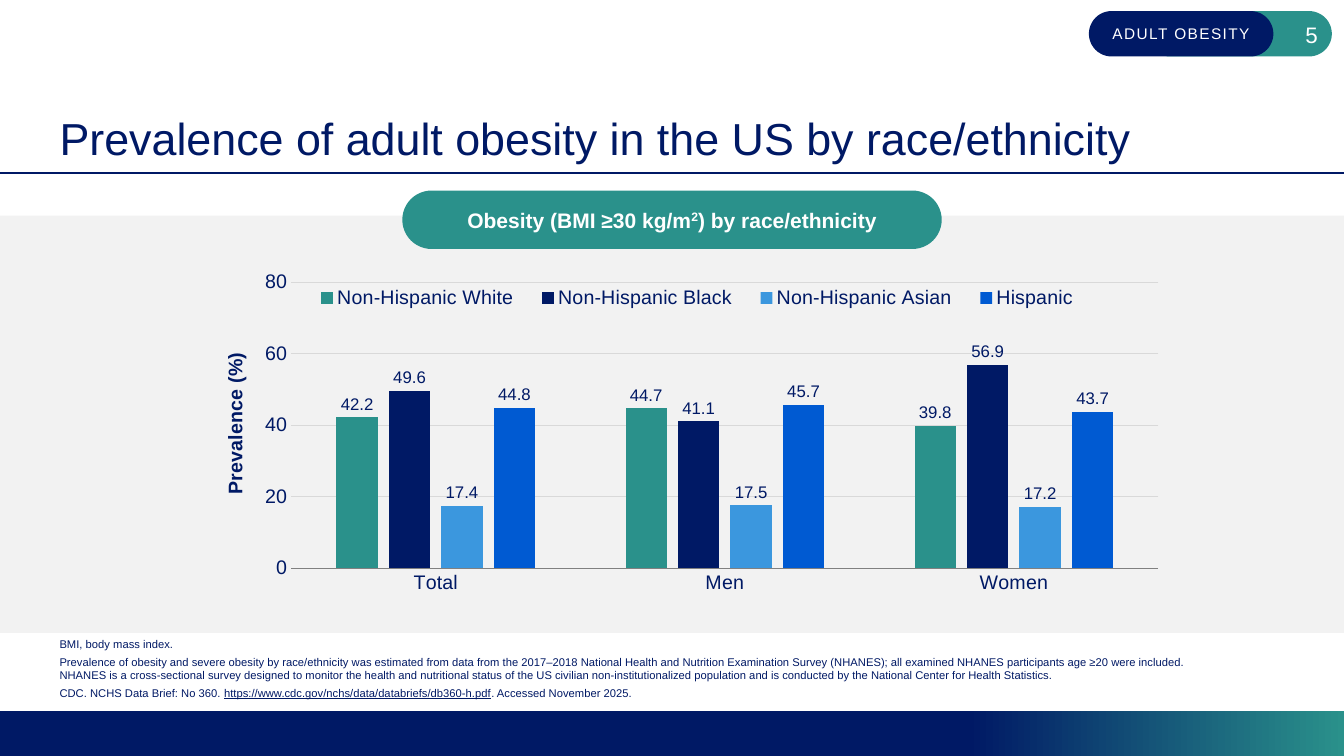
import copy

import pptx
import pptx.chart.data
import pptx.dml.color
import pptx.enum.chart
import pptx.enum.shapes
import pptx.enum.text
import pptx.oxml
import pptx.oxml.ns
import pptx.util

Inches, Pt = pptx.util.Inches, pptx.util.Pt
RGBColor = pptx.dml.color.RGBColor
SHAPE = pptx.enum.shapes.MSO_SHAPE
ALIGN = pptx.enum.text.PP_ALIGN
ANCHOR = pptx.enum.text.MSO_ANCHOR
XL = pptx.enum.chart
qn = pptx.oxml.ns.qn

NAVY = RGBColor(0x00, 0x19, 0x65)
TEAL = RGBColor(0x2A, 0x91, 0x8B)
SKY = RGBColor(0x3B, 0x97, 0xDE)
BLUE = RGBColor(0x00, 0x5A, 0xD2)
WHITE = RGBColor(0xFF, 0xFF, 0xFF)
PANEL = RGBColor(0xF2, 0xF2, 0xF2)
GRID = RGBColor(0xD9, 0xD9, 0xD9)
AXIS = RGBColor(0x80, 0x80, 0x80)

TITLE = "Prevalence of adult obesity in the US by race/ethnicity"
SECTION = "ADULT OBESITY"
PAGE = "5"
HEADING = [("Obesity (BMI ≥30 kg/m", False), ("2", True), (") by race/ethnicity", False)]
NOTES = [
    [("BMI, body mass index.", False)],
    [("Prevalence of obesity and severe obesity by race/ethnicity was estimated from data from the "
      "2017–2018 National Health and Nutrition Examination Survey (NHANES); all examined NHANES "
      "participants age ≥20 were included.\vNHANES is a cross-sectional survey designed to monitor "
      "the health and nutritional status of the US civilian non-institutionalized population and is "
      "conducted by the National Center for Health Statistics.", False)],
    [("CDC. NCHS Data Brief: No 360. ", False),
     ("https://www.cdc.gov/nchs/data/databriefs/db360-h.pdf", True),
     (". Accessed November 2025.", False)],
]
GROUPS = ["Total", "Men", "Women"]
SERIES = [
    ("Non-Hispanic White", (42.2, 44.7, 39.8), TEAL),
    ("Non-Hispanic Black", (49.6, 41.1, 56.9), NAVY),
    ("Non-Hispanic Asian", (17.4, 17.5, 17.2), SKY),
    ("Hispanic", (44.8, 45.7, 43.7), BLUE),
]


def style(font, size, color=NAVY, bold=False):
    """Set the face, size, colour and weight of a font."""
    font.name, font.size, font.bold = "Arial", Pt(size), bold
    font.color.rgb = color


def add_block(s, kind, box, color):
    """Add a filled shape without outline or shadow."""
    sp = s.shapes.add_shape(kind, *map(Inches, box))
    sp.shadow.inherit = False
    sp.fill.solid()
    sp.fill.fore_color.rgb = color
    sp.line.fill.background()
    if kind == SHAPE.ROUNDED_RECTANGLE:
        sp.adjustments[0] = 0.5
    return sp


def prepare(tf, anchor, margin=0):
    """Set wrapping, anchor and equal margins of a text frame."""
    tf.word_wrap = True
    tf.auto_size = pptx.enum.text.MSO_AUTO_SIZE.NONE
    tf.vertical_anchor = anchor
    tf.margin_left = tf.margin_right = tf.margin_top = tf.margin_bottom = Inches(margin)
    return tf


def write(tf, text, size, color, align):
    """Write one styled paragraph."""
    p = tf.paragraphs[0]
    p.text, p.alignment = text, align
    style(p.runs[0].font, size, color)
    return p.runs[0]


def set_layout(parent, index, mode, **fractions):
    """Place a chart part by fractions of the chart area."""
    for old in parent.findall(qn("c:layout")):
        parent.remove(old)
    inner = '<c:layoutTarget val="inner"/>' if mode == "inner" else ""
    modes = '<c:xMode val="edge"/><c:yMode val="edge"/>'
    values = "".join(f'<c:{k} val="{v}"/>' for k, v in fractions.items())
    parent.insert(index, pptx.oxml.parse_xml(
        f'<c:layout {pptx.oxml.ns.nsdecls("c")}><c:manualLayout>{inner}{modes}{values}'
        '</c:manualLayout></c:layout>'))


def add_frame(s):
    """Add the footer band, title rule, badge and grey panel."""
    band = add_block(s, SHAPE.RECTANGLE, (0, 7.05, 13.33, 0.45), NAVY)
    band.fill.gradient()
    band.fill.gradient_angle = 0
    first = band._element.spPr.find(".//" + qn("a:gs"))
    first.addnext(copy.deepcopy(first))
    for stop, (position, color) in zip(band.fill.gradient_stops,
                                       [(0, NAVY), (0.72, NAVY), (1, TEAL)]):
        stop.position, stop.color.rgb = position, color

    rule = s.shapes.add_connector(pptx.enum.shapes.MSO_CONNECTOR.STRAIGHT,
                                  0, Inches(1.72), Inches(13.33), Inches(1.72))
    rule.line.color.rgb, rule.line.width = NAVY, Pt(1.5)
    rule._element.spPr.append(pptx.oxml.parse_xml(
        f'<a:effectLst {pptx.oxml.ns.nsdecls("a")}/>'))

    add_block(s, SHAPE.ROUNDED_RECTANGLE, (11.38, 0.11, 1.83, 0.45), TEAL)
    badge = add_block(s, SHAPE.ROUNDED_RECTANGLE, (10.8, 0.11, 1.83, 0.45), NAVY)
    r = write(prepare(badge.text_frame, ANCHOR.MIDDLE, 0.04), SECTION, 11, WHITE, ALIGN.CENTER)
    r.font._element.set("spc", "100")
    page = s.shapes.add_textbox(*map(Inches, (12.54, 0.14, 0.63, 0.4)))
    write(prepare(page.text_frame, ANCHOR.MIDDLE, 0.1), PAGE, 16, WHITE, ALIGN.RIGHT)
    add_block(s, SHAPE.RECTANGLE, (0, 2.14, 13.33, 4.14), PANEL)


def add_texts(s):
    """Fill the title, the chart heading and the footnotes."""
    title = s.shapes.title
    title.left, title.top, title.width, title.height = map(Inches, (0.59, 0.45, 11.92, 1.18))
    write(prepare(title.text_frame, ANCHOR.BOTTOM), TITLE, 32, NAVY, ALIGN.LEFT)

    pill = add_block(s, SHAPE.ROUNDED_RECTANGLE, (3.99, 1.89, 5.35, 0.58), TEAL)
    p = prepare(pill.text_frame, ANCHOR.MIDDLE).paragraphs[0]
    p.alignment = ALIGN.CENTER
    for text, raised in HEADING:
        r = p.add_run()
        r.text = text
        style(r.font, 15, WHITE, True)
        if raised:
            r.font._element.set("baseline", "30000")

    notes = s.shapes.add_textbox(*map(Inches, (0.59, 6.37, 11.92, 0.57)))
    tf = prepare(notes.text_frame, ANCHOR.BOTTOM)
    for i, parts in enumerate(NOTES):
        p = tf.add_paragraph() if i else tf.paragraphs[0]
        p.space_after = Pt(3)
        p.text = parts[0][0]
        for text, _ in parts[1:]:
            p.add_run().text = text
        for r in p.runs:
            style(r.font, 8)
            r.font.underline = (r.text, True) in parts


def add_prevalence_chart(s):
    """Add the clustered columns by group and ethnicity."""
    data = pptx.chart.data.CategoryChartData(number_format="0.0")
    data.categories = GROUPS
    for name, values, _ in SERIES:
        data.add_series(name, values)
    chart = s.shapes.add_chart(XL.XL_CHART_TYPE.COLUMN_CLUSTERED,
                               *map(Inches, (1.67, 2.62, 9.99, 3.37)), data).chart
    style(chart.font, 14)
    chart.has_title = False
    plot = chart.plots[0]
    plot.gap_width, plot.overlap, plot.vary_by_categories = 219, -27, False
    for series, (_, _, color) in zip(plot.series, SERIES):
        series.format.fill.solid()
        series.format.fill.fore_color.rgb = color
        labels = series.data_labels
        labels.show_value = True
        labels.position = XL.XL_LABEL_POSITION.OUTSIDE_END
        style(labels.font, 12)

    cat, val = chart.category_axis, chart.value_axis
    for axis in (cat, val):
        axis.major_tick_mark = axis.minor_tick_mark = XL.XL_TICK_MARK.NONE
        style(axis.tick_labels.font, 14)
    cat.format.line.color.rgb, cat.format.line.width = AXIS, Pt(0.75)
    val.format.line.fill.background()
    val.minimum_scale, val.maximum_scale, val.major_unit = 0, 80, 20
    val.tick_labels.number_format, val.tick_labels.number_format_is_linked = "0", False
    grid = val.major_gridlines.format.line
    grid.color.rgb, grid.width = GRID, Pt(0.75)
    tf = val.axis_title.text_frame
    tf.text = "Prevalence (%)"
    style(tf.paragraphs[0].runs[0].font, 14, bold=True)
    set_layout(val.axis_title._element, 1, "edge", x=0.05, y=0.25)

    chart.has_legend = True
    legend = chart.legend
    legend.position = XL.XL_LEGEND_POSITION.BOTTOM
    legend.include_in_layout = False
    style(legend.font, 14)
    set_layout(legend._element, 1, "edge", x=0.13, y=0.05, w=0.79, h=0.1)
    set_layout(chart._chartSpace.chart.plotArea, 0, "inner", x=0.122, y=0.053, w=0.861, h=0.842)


def main():
    """Build the slide and save it."""
    prs = pptx.Presentation()
    prs.slide_width, prs.slide_height = Inches(13.33), Inches(7.5)
    s = prs.slides.add_slide(prs.slide_layouts[5])
    add_frame(s)
    add_texts(s)
    add_prevalence_chart(s)
    prs.save("out.pptx")


if __name__ == "__main__":
    main()
